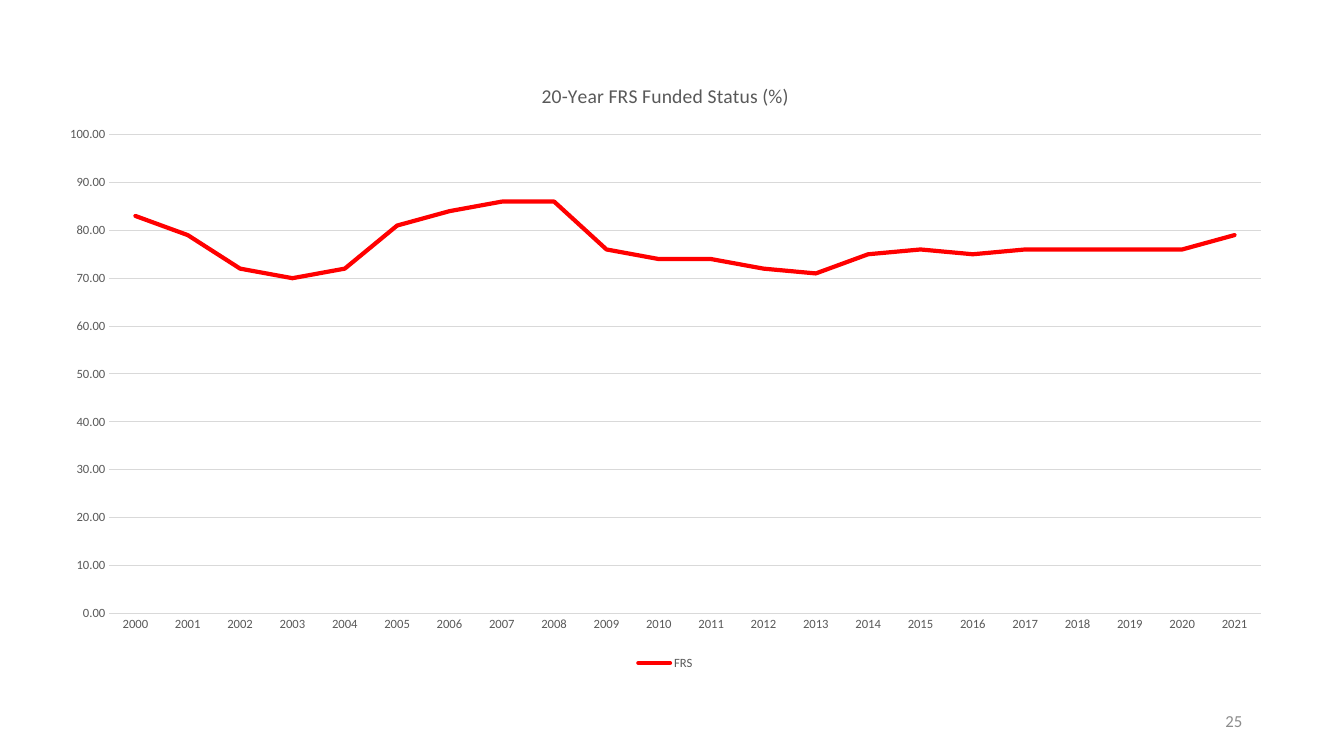
from typing import NamedTuple

from pptx import Presentation
from pptx.chart.chart import Chart
from pptx.chart.data import CategoryChartData
from pptx.dml.color import RGBColor
from pptx.enum.chart import XL_CHART_TYPE as ChartType
from pptx.enum.chart import XL_LEGEND_POSITION as LegendPosition
from pptx.enum.chart import XL_TICK_MARK as TickMark
from pptx.enum.text import MSO_ANCHOR, PP_ALIGN
from pptx.slide import Slide
from pptx.text.text import Font
from pptx.util import Inches, Pt

RED = RGBColor(0xFF, 0x00, 0x00)
DARK_GREY = RGBColor(0x59, 0x59, 0x59)
MID_GREY = RGBColor(0x8C, 0x8C, 0x8C)
LIGHT_GREY = RGBColor(0xD9, 0xD9, 0xD9)
TYPEFACE = "Calibri"
FIRST_YEAR = 2000
FUNDED_PERCENT = (
    83, 79, 72, 70, 72, 81, 84, 86, 86, 76, 74,
    74, 72, 71, 75, 76, 75, 76, 76, 76, 76, 79,
)


class TextStyle(NamedTuple):
    size: float
    color: RGBColor


CHART_TITLE = TextStyle(14, DARK_GREY)
CHART_LABEL = TextStyle(9, DARK_GREY)
PAGE_NUMBER = TextStyle(12, MID_GREY)


def apply_style(font: Font, style: TextStyle) -> None:
    font.name = TYPEFACE
    font.size = Pt(style.size)
    font.bold = False
    font.color.rgb = style.color


def format_axes(chart: Chart) -> None:
    years, percent = chart.category_axis, chart.value_axis
    for axis in (years, percent):
        axis.major_tick_mark = axis.minor_tick_mark = TickMark.NONE
        apply_style(axis.tick_labels.font, CHART_LABEL)

    percent.minimum_scale, percent.maximum_scale = 0, 100
    percent.major_unit = 10
    percent.tick_labels.number_format = "0.00"
    percent.tick_labels.number_format_is_linked = False
    percent.format.line.fill.background()
    percent.has_major_gridlines = True

    for line in (years.format.line, percent.major_gridlines.format.line):
        line.color.rgb = LIGHT_GREY
        line.width = Pt(0.75)


def format_series(chart: Chart) -> None:
    chart.plots[0].vary_by_categories = False
    frs = chart.plots[0].series[0]
    frs.smooth = False
    frs.format.line.color.rgb = RED
    frs.format.line.width = Pt(3)
    for outline in chart.element.xpath(".//c:ser/c:spPr/a:ln"):
        outline.set("cap", "rnd")


def add_funded_status(slide: Slide) -> None:
    data = CategoryChartData(number_format="0.00")
    data.categories = [str(FIRST_YEAR + n) for n in range(len(FUNDED_PERCENT))]
    data.add_series("FRS", FUNDED_PERCENT)
    chart = slide.shapes.add_chart(
        ChartType.LINE, Inches(0.45), Inches(0.61), Inches(12.3), Inches(6.08), data
    ).chart
    chart.font.name = TYPEFACE
    chart.font.size = Pt(10)

    chart.has_title = True
    heading = chart.chart_title.text_frame.paragraphs[0].add_run()
    heading.text = "20-Year FRS Funded Status (%)"
    apply_style(heading.font, CHART_TITLE)

    chart.has_legend = True
    chart.legend.position = LegendPosition.BOTTOM
    chart.legend.include_in_layout = False
    apply_style(chart.legend.font, CHART_LABEL)

    format_axes(chart)
    format_series(chart)


def add_page_number(slide: Slide, number: int) -> None:
    frame = slide.shapes.add_textbox(
        Inches(9.42), Inches(6.95), Inches(3), Inches(0.4)
    ).text_frame
    frame.word_wrap = True
    frame.vertical_anchor = MSO_ANCHOR.MIDDLE
    paragraph = frame.paragraphs[0]
    paragraph.alignment = PP_ALIGN.RIGHT
    digits = paragraph.add_run()
    digits.text = str(number)
    apply_style(digits.font, PAGE_NUMBER)


def main() -> None:
    deck = Presentation()
    deck.slide_width, deck.slide_height = Inches(13.33), Inches(7.5)
    slide = deck.slides.add_slide(deck.slide_layouts.get_by_name("Blank"))
    add_page_number(slide, 25)
    add_funded_status(slide)
    deck.save("out.pptx")


if __name__ == "__main__":
    main()
